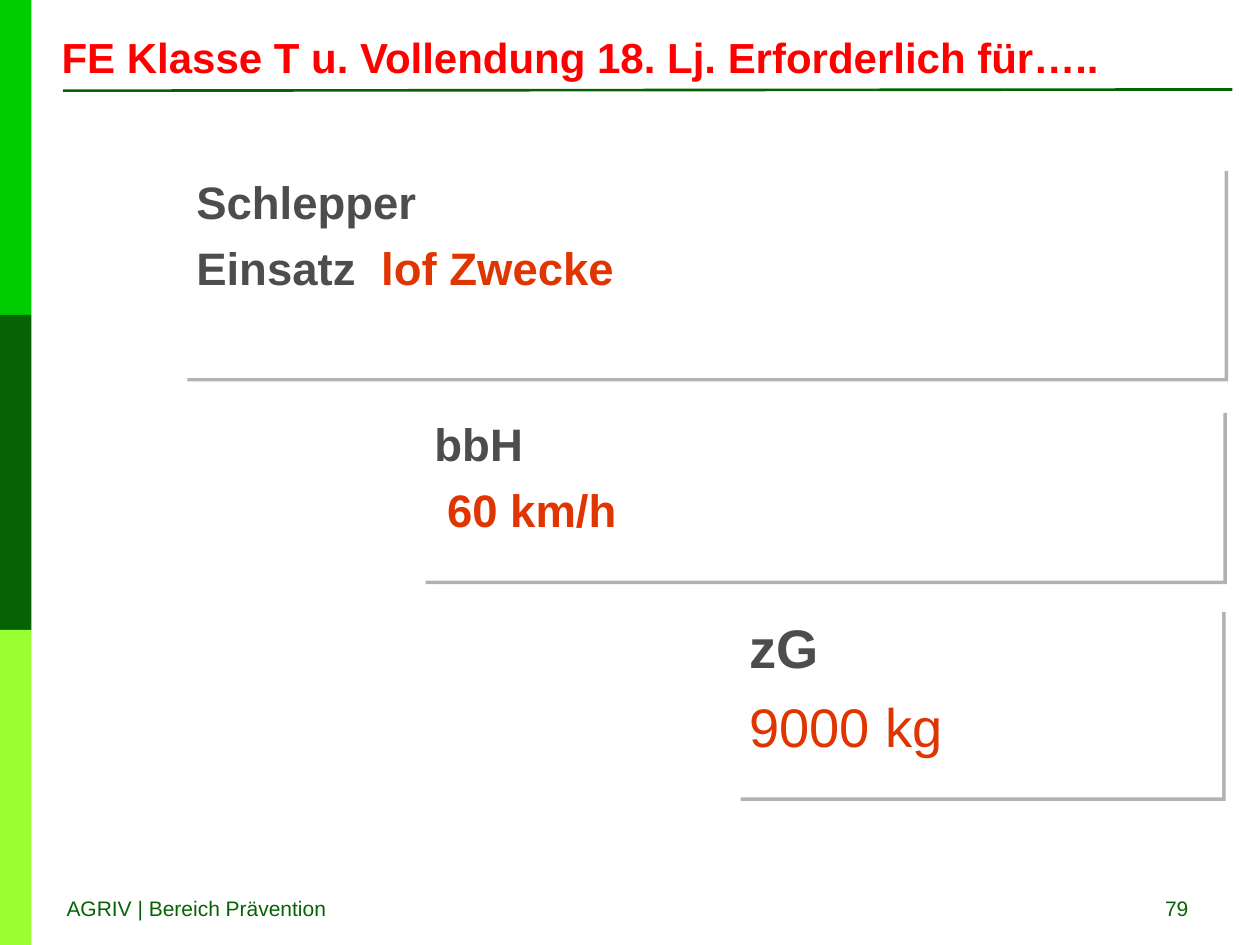
from dataclasses import dataclass

from lxml.etree import SubElement
from pptx import Presentation
from pptx.dml.color import RGBColor
from pptx.enum.shapes import MSO_CONNECTOR as Connector, MSO_SHAPE as Shape
from pptx.enum.text import MSO_ANCHOR as Anchor, PP_ALIGN as Align
from pptx.oxml.ns import qn
from pptx.util import Inches, Pt

FONT = "Arial"
GREEN, GREY, ORANGE = "056303", "4D4D4D", "E03500"
WHITE, RED, SHADOW = "FFFFFF", "FF0000", "B2B2B2"


@dataclass
class Run:
    text: str
    size: float
    color: str
    bold: bool = True


@dataclass
class Condition:
    left: float
    top: float
    width: float
    height: float
    gap: float
    lines: list[list[Run]]


def rgb(code: str) -> RGBColor:
    return RGBColor.from_string(code)


def add_box(slide, left: float, top: float, width: float, height: float, color: str):
    box = slide.shapes.add_shape(
        Shape.RECTANGLE, Inches(left), Inches(top), Inches(width), Inches(height))
    box.shadow.inherit = False
    box.fill.solid()
    box.fill.fore_color.rgb = rgb(color)
    box.line.fill.background()
    return box


def add_runs(paragraph, runs: list[Run], align=Align.LEFT) -> None:
    paragraph.alignment = align
    for part in runs:
        run = paragraph.add_run()
        run.text = part.text
        run.font.name = FONT
        run.font.size = Pt(part.size)
        run.font.bold = part.bold
        run.font.color.rgb = rgb(part.color)


def add_label(slide, left: float, top: float, width: float, height: float,
              run: Run, align=Align.LEFT, anchor=Anchor.TOP) -> None:
    label = slide.shapes.add_textbox(
        Inches(left), Inches(top), Inches(width), Inches(height))
    label.text_frame.word_wrap = True
    label.text_frame.vertical_anchor = anchor
    add_runs(label.text_frame.paragraphs[0], [run], align)


def add_shadow(box) -> None:
    effects = box._element.spPr.find(qn("a:effectLst"))
    shadow = SubElement(effects, qn("a:outerShdw"), blurRad="0",
                        dist=str(Pt(2.8)), dir=str(45 * 60000),
                        algn="ctr", rotWithShape="0")
    SubElement(shadow, qn("a:srgbClr"), val=SHADOW)


def add_condition(slide, condition: Condition) -> None:
    box = add_box(slide, condition.left, condition.top,
                  condition.width, condition.height, WHITE)
    add_shadow(box)
    frame = box.text_frame
    frame.word_wrap = True
    frame.vertical_anchor = Anchor.TOP
    for index, runs in enumerate(condition.lines):
        paragraph = frame.add_paragraph() if index else frame.paragraphs[0]
        if index:
            paragraph.space_before = Pt(condition.gap)
        add_runs(paragraph, runs)


def add_rule(slide) -> None:
    rule = slide.shapes.add_connector(
        Connector.STRAIGHT, Inches(0.5), Inches(0.72), Inches(9.78), Inches(0.71))
    rule.line.color.rgb = rgb(GREEN)
    rule.line.width = Pt(1.5)
    SubElement(rule._element.spPr, qn("a:effectLst"))


CONDITIONS = [
    Condition(1.46, 1.33, 8.26, 1.67, 6.5, [
        [Run("Schlepper", 26, GREY)],
        [Run("Einsatz  ", 26, GREY), Run("lof Zwecke", 26, ORANGE)]]),
    Condition(3.35, 3.25, 6.36, 1.36, 6.5, [
        [Run("bbH", 26, GREY)],
        [Run(" 60 km/h", 26, ORANGE)]]),
    Condition(5.85, 4.83, 3.85, 1.5, 7.5, [
        [Run("zG", 31, GREY)],
        [Run("9000 kg", 31, ORANGE, bold=False)]]),
]


def main() -> None:
    deck = Presentation()
    deck.slide_width, deck.slide_height = Inches(10), Inches(7.5)
    slide = deck.slides.add_slide(deck.slide_layouts[6])

    # Side band in three equal parts
    for index, color in enumerate(["00CC00", GREEN, "99FF33"]):
        add_box(slide, 0, 2.5 * index, 0.25, 2.5, color)

    # Heading and its rule
    add_rule(slide)
    add_label(slide, 0.39, 0.15, 8.79, 0.6,
              Run("FE Klasse T u. Vollendung 18. Lj. Erforderlich für…..", 24, RED),
              anchor=Anchor.MIDDLE)

    # Stepped conditions
    for condition in CONDITIONS:
        add_condition(slide, condition)

    # Footer
    add_label(slide, 0.43, 7.06, 2.76, 0.3,
              Run("AGRIV | Bereich Prävention", 12, GREEN, bold=False))
    add_label(slide, 7.2, 7.06, 2.33, 0.33,
              Run("79", 12, GREEN, bold=False), Align.RIGHT)

    deck.save("out.pptx")


if __name__ == "__main__":
    main()
